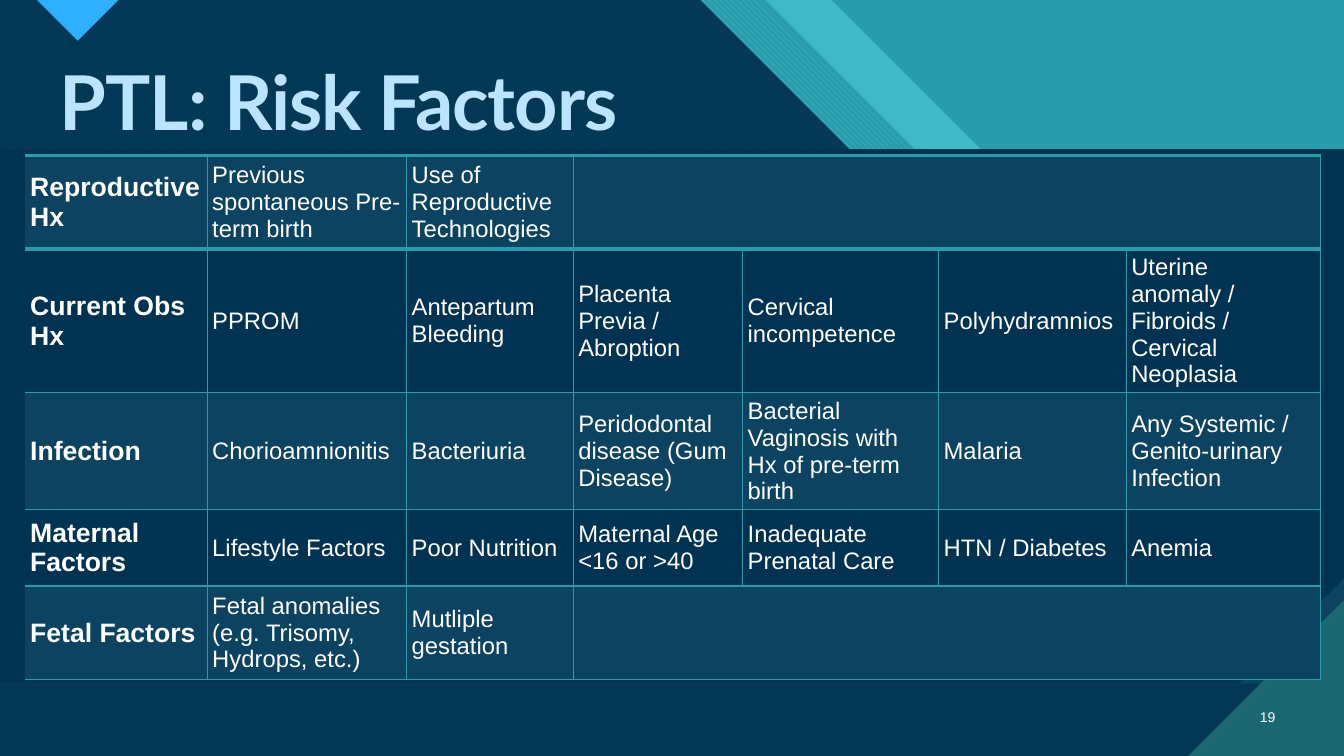
from pptx import Presentation
from pptx import util as u
from pptx.dml import color
from pptx.enum import dml, shapes, text
from pptx.oxml import ns, xmlchemy

Pt = u.Pt
PAGE = (0, 0, 960, 540)
NAVY, STEEL, TEAL, AQUA, PINE = "003352", "0C4360", "299CAB", "47C3D3", "1B6872"
WHITE = "FFFFFF"
SHELF = 214
COLUMNS = (130, 142.5, 119, 121, 140, 134, 139)
ROWS = (67, 102, 83.5, 54.5, 67)
RISKS = (
    ("Reproductive Hx", "Previous spontaneous Pre-term birth",
     "Use of Reproductive Technologies"),
    ("Current Obs Hx", "PPROM", "Antepartum Bleeding",
     "Placenta Previa / Abroption", "Cervical incompetence", "Polyhydramnios",
     "Uterine anomaly / Fibroids / Cervical Neoplasia"),
    ("Infection", "Chorioamnionitis", "Bacteriuria",
     "Peridodontal disease (Gum Disease)",
     "Bacterial Vaginosis with Hx of pre-term birth", "Malaria",
     "Any Systemic / Genito-urinary Infection"),
    ("Maternal Factors", "Lifestyle Factors", "Poor Nutrition",
     "Maternal Age <16 or >40", "Inadequate Prenatal Care", "HTN / Diabetes",
     "Anemia"),
    ("Fetal Factors", "Fetal anomalies (e.g. Trisomy, Hydrops, etc.)",
     "Mutliple gestation"),
)


def rgb(code):
    return color.RGBColor.from_string(code)


def paint(shape, front, back=None, pattern=None, opacity=100):
    shape.shadow.inherit = False
    shape.line.fill.background()
    if pattern:
        shape.fill.patterned()
        shape.fill.pattern = pattern
        shape.fill.fore_color.rgb = rgb(front)
        shape.fill.back_color.rgb = rgb(back)
        return
    shape.fill.solid()
    shape.fill.fore_color.rgb = rgb(front)
    if opacity < 100:
        tone = shape.element.spPr.xpath("./a:solidFill/a:srgbClr")[0]
        alpha = xmlchemy.OxmlElement("a:alpha")
        alpha.set("val", str(opacity * 1000))
        tone.append(alpha)


def add_rectangle(page, box):
    return page.shapes.add_shape(shapes.MSO_SHAPE.RECTANGLE, *map(Pt, box))


def add_outline(page, points):
    corners = [(Pt(x), Pt(y)) for x, y in points]
    builder = page.shapes.build_freeform(*corners[0], scale=1.0)
    builder.add_line_segments(corners[1:], close=True)
    return builder.convert_to_shape()


def add_field(page, box, start, shelf_end):
    left, top, width, height = box
    right, bottom = left + width, top + height
    return add_outline(page, [
        (left, top), (left + start, top),
        (left + start + SHELF, top + SHELF), (left + shelf_end, top + SHELF),
        (right, top + SHELF + width - shelf_end), (right, bottom), (left, bottom)])


def draw_backdrop(page, box):
    paint(add_rectangle(page, box), TEAL)
    paint(add_field(page, box, 594, 888), AQUA, opacity=74)
    paint(add_field(page, box, 547, 852.5), AQUA, TEAL,
          dml.MSO_PATTERN.WIDE_DOWNWARD_DIAGONAL)
    paint(add_field(page, box, 500, 805), AQUA, PINE,
          dml.MSO_PATTERN.WIDE_UPWARD_DIAGONAL)
    paint(add_field(page, box, 500, 805), NAVY, opacity=90)


def draw_pointer(page, box):
    left, top, width, height = box
    marker = add_outline(page, [
        (left, top), (left + width, top), (left + width / 2, top + height)])
    paint(marker, "2FAFFF", PINE, dml.MSO_PATTERN.DARK_HORIZONTAL)


def draw_panel(page, box):
    left, top, width, height = box
    right, bottom, snip = left + width, top + height, 75
    paint(add_rectangle(page, box), STEEL, PINE, dml.MSO_PATTERN.DARK_VERTICAL)
    paint(add_outline(page, [
        (left, top), (right, top), (right, bottom - snip),
        (right - snip, bottom), (left, bottom)]), NAVY)


def draw_corner(page, box):
    left, top, width, height = box
    right, bottom = left + width, top + height
    corner = add_outline(page, [(left, bottom), (right, bottom), (right, top)])
    paint(corner, PINE, AQUA, dml.MSO_PATTERN.DARK_HORIZONTAL)


def place(shape, box):
    shape.left, shape.top, shape.width, shape.height = map(Pt, box)


def write(para, words, size, font, tone, bold=False):
    para.text = words
    para.font.size = Pt(size)
    para.font.name = font
    para.font.bold = bold
    para.font.color.rgb = rgb(tone)


def set_title(page, box):
    title = page.shapes.title
    title.element.getparent().append(title.element)
    place(title, box)
    frame = title.text_frame
    frame.auto_size = text.MSO_AUTO_SIZE.NONE
    frame.vertical_anchor = text.MSO_ANCHOR.MIDDLE
    para = frame.paragraphs[0]
    write(para, "PTL: Risk Factors", 54, "Lato", "BAE4FF", True)
    para.alignment = text.PP_ALIGN.LEFT
    para.line_spacing = 0.9
    para.runs[0].font._element.set("spc", "-70")


def set_borders(cell, widths):
    properties = cell._tc.get_or_add_tcPr()
    for index, (side, width) in enumerate(widths.items()):
        edge = xmlchemy.OxmlElement("a:ln" + side)
        edge.set("w", str(Pt(width)))
        if width:
            fill = xmlchemy.OxmlElement("a:solidFill")
            tone = xmlchemy.OxmlElement("a:srgbClr")
            tone.set("val", TEAL)
            fill.append(tone)
        else:
            fill = xmlchemy.OxmlElement("a:noFill")
        edge.append(fill)
        properties.insert(index, edge)


def fill_cell(cell, words, row, column):
    if row % 2:
        cell.fill.background()
    else:
        cell.fill.solid()
        cell.fill.fore_color.rgb = rgb(STEEL)
    cell.vertical_anchor = text.MSO_ANCHOR.MIDDLE
    cell.margin_left = cell.margin_right = Pt(3.6)
    cell.margin_top = cell.margin_bottom = Pt(3.6)
    heading = column == 0
    write(cell.text_frame.paragraphs[0], words, 19 if heading else 17,
          "Arial", WHITE, heading)
    last = column == len(COLUMNS) - 1
    set_borders(cell, {
        "L": 0 if heading or cell.is_spanned else 1,
        "R": 1 if last or not cell.is_spanned else 0,
        "T": 3 if row < 2 else 1,
        "B": 3 if row == 0 else 1})


def draw_risk_table(page, box):
    table = page.shapes.add_table(len(ROWS), len(COLUMNS), *map(Pt, box)).table
    table.first_row = table.horz_banding = False
    for column, width in zip(table.columns, COLUMNS):
        column.width = Pt(width)
    for row, height in zip(table.rows, ROWS):
        row.height = Pt(height)
    last = len(COLUMNS) - 1
    for row, factors in enumerate(RISKS):
        if len(factors) < len(COLUMNS):
            table.cell(row, len(factors)).merge(table.cell(row, last))
        for column in range(len(COLUMNS)):
            words = factors[column] if column < len(factors) else ""
            fill_cell(table.cell(row, column), words, row, column)


def draw_page_number(page, box):
    frame = page.shapes.add_textbox(*map(Pt, box)).text_frame
    frame.word_wrap = True
    frame.vertical_anchor = text.MSO_ANCHOR.MIDDLE
    para = frame.paragraphs[0]
    write(para, "19", 10, "Arial", WHITE)
    para.alignment = text.PP_ALIGN.RIGHT


def main():
    deck = Presentation()
    deck.slide_width, deck.slide_height = Pt(PAGE[2]), Pt(PAGE[3])
    page = deck.slides.add_slide(deck.slide_layouts[5])
    draw_backdrop(page, PAGE)
    draw_pointer(page, (26.5, 0, 58, 29))
    draw_panel(page, (0, 106.5, 960, 381.5))
    draw_corner(page, (849, 429, 111, 111))
    set_title(page, (35.5, 42.5, 882.5, 66))
    draw_risk_table(page, (18, 111, sum(COLUMNS), sum(ROWS)))
    draw_page_number(page, (886, 497.5, 32, 29))
    deck.save("out.pptx")


if __name__ == "__main__":
    main()
